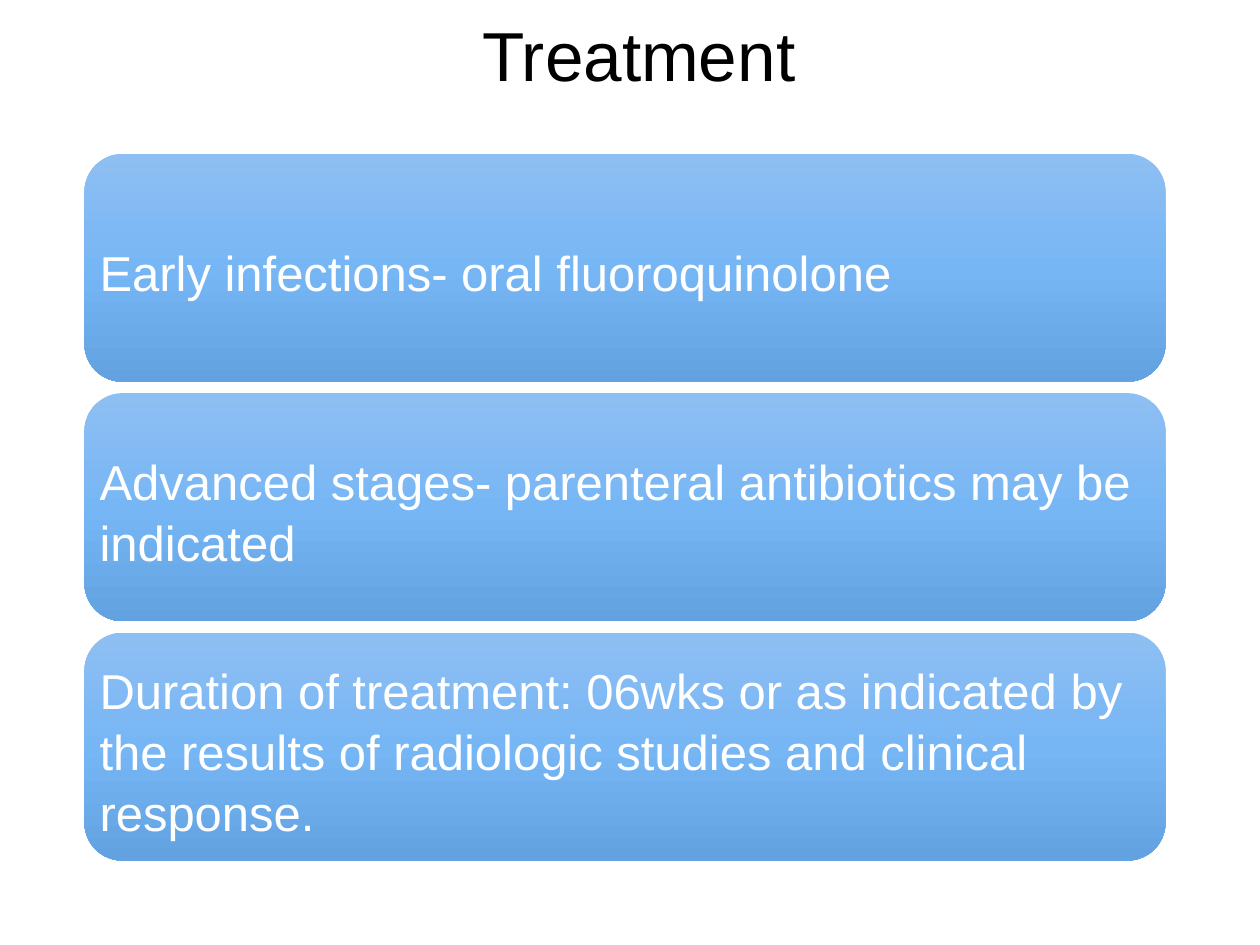
from copy import deepcopy
from dataclasses import dataclass

from pptx import Presentation
from pptx.dml.color import RGBColor
from pptx.enum.shapes import MSO_SHAPE
from pptx.enum.text import MSO_ANCHOR, PP_ALIGN
from pptx.util import Inches, Pt

FONT = "Arial"
GRADIENT = ("8EBFF2", "77B6F5", "63A2E1")
LEFT, TOP, WIDTH, HEIGHT, PITCH = 0.67, 1.22, 8.58, 1.81, 1.9


@dataclass
class Card:
    row: int
    text: str


CARDS = [Card(row, text) for row, text in enumerate((
    "Early infections- oral fluoroquinolone",
    "Advanced stages- parenteral antibiotics may be indicated",
    "Duration of treatment: 06wks or as indicated by the results of "
    "radiologic studies and clinical response.",
))]


def rgb(value: str) -> RGBColor:
    return RGBColor.from_string(value)


def format_text(p, size: float, color: str, align) -> None:
    p.alignment = align
    p.font.name = FONT
    p.font.size = Pt(size)
    p.font.color.rgb = rgb(color)


def fill_downward(fill, colors: tuple[str, ...]) -> None:
    """Fill from top to bottom with evenly spaced colours."""
    fill.gradient()
    fill.gradient_angle = 270
    first = fill.gradient_stops[0]._gs
    for _ in range(len(colors) - len(fill.gradient_stops)):
        first.addnext(deepcopy(first))
    for i, (stop, color) in enumerate(zip(fill.gradient_stops, colors)):
        stop.position = i / (len(colors) - 1)
        stop.color.rgb = rgb(color)


def add_title(s, text: str) -> None:
    sp = s.shapes.title
    sp.left, sp.top, sp.width, sp.height = map(Inches, (0.5, 0, 9, 1.39))
    tf = sp.text_frame
    tf.text = text
    tf.vertical_anchor = MSO_ANCHOR.TOP
    tf.margin_top = Inches(0.1)
    tf.margin_left, tf.margin_right = Inches(0.24), Inches(0.1)
    format_text(tf.paragraphs[0], 39.6, "000000", PP_ALIGN.CENTER)


def add_card(s, card: Card) -> None:
    top = TOP + card.row * PITCH
    sp = s.shapes.add_shape(MSO_SHAPE.ROUNDED_RECTANGLE,
                            *map(Inches, (LEFT, top, WIDTH, HEIGHT)))
    sp.shadow.inherit = False
    sp.line.fill.background()
    fill_downward(sp.fill, GRADIENT)

    # The text box spans the whole card, clear of the corner inset.
    box = s.shapes.add_textbox(sp.left, sp.top, sp.width, sp.height)
    tf = box.text_frame
    tf.word_wrap = True
    tf.vertical_anchor = MSO_ANCHOR.MIDDLE
    tf.margin_left = tf.margin_right = tf.margin_bottom = Inches(0.12)
    tf.margin_top = Inches(0.17)
    p = tf.paragraphs[0]
    p.text = card.text
    p.line_spacing = 1.04
    format_text(p, 28, "FFFFFF", PP_ALIGN.LEFT)


def main() -> None:
    prs = Presentation()
    prs.slide_width, prs.slide_height = Inches(10), Inches(7.5)
    s = prs.slides.add_slide(prs.slide_layouts[5])
    add_title(s, "Treatment")
    for card in CARDS:
        add_card(s, card)
    prs.save("out.pptx")


if __name__ == "__main__":
    main()
